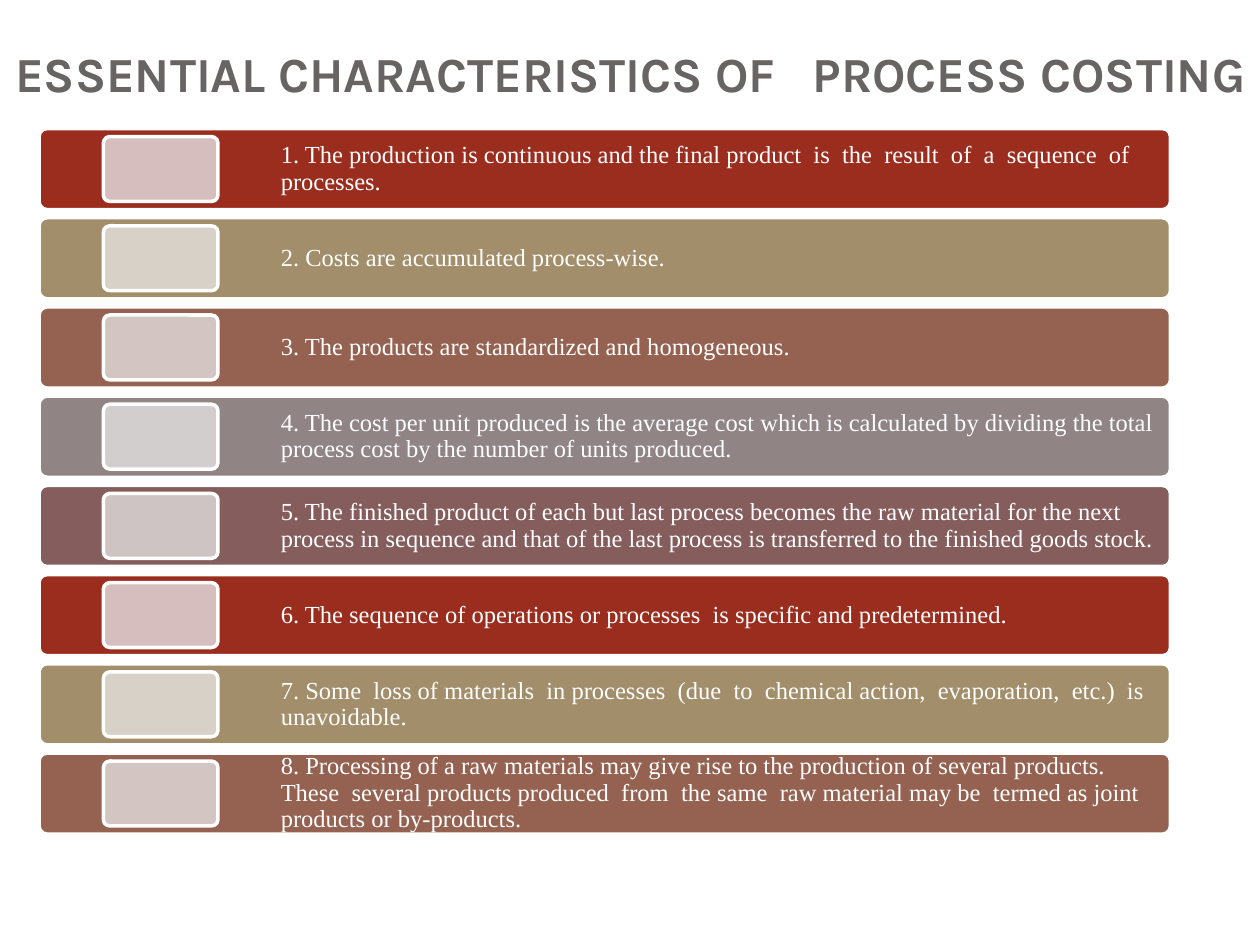
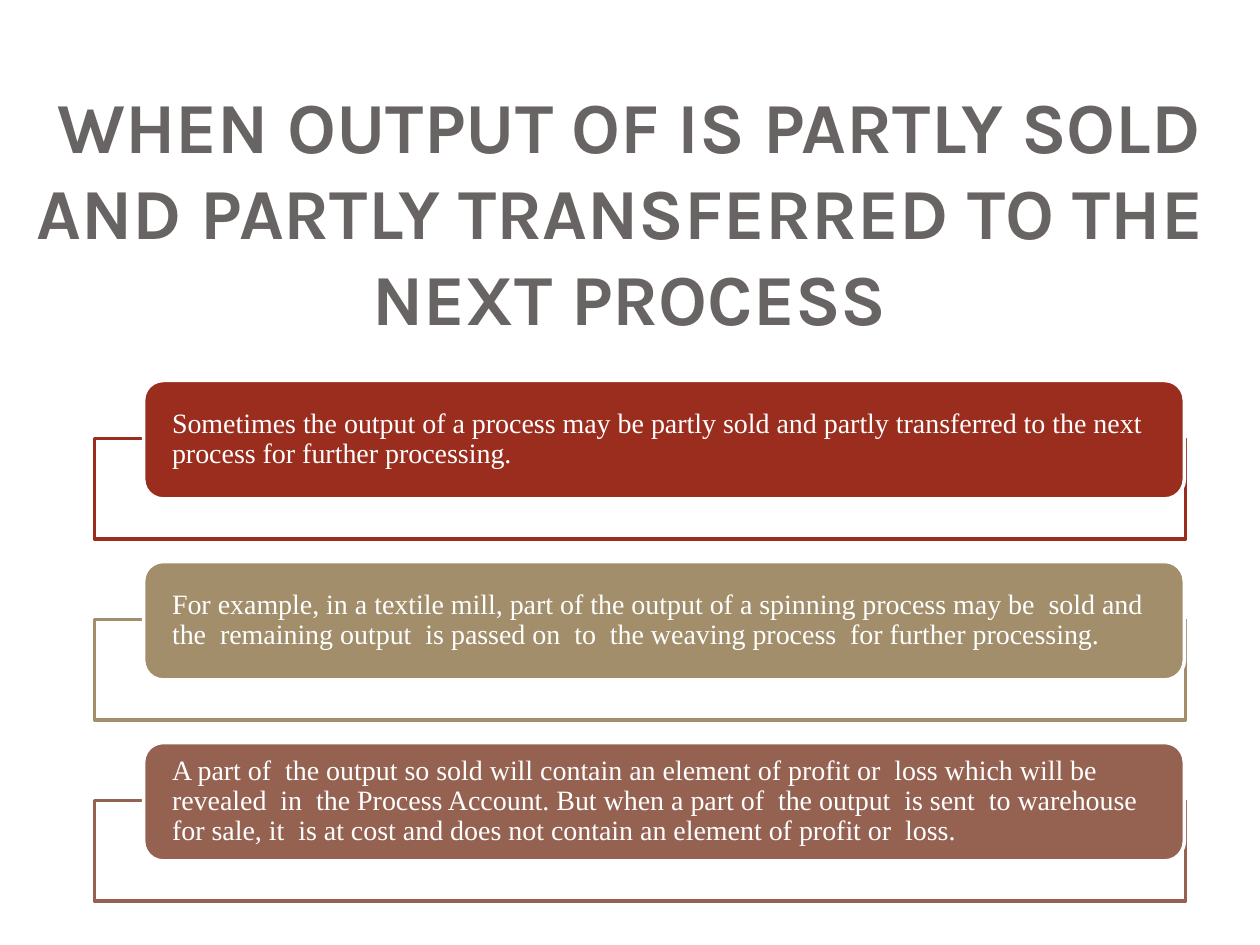
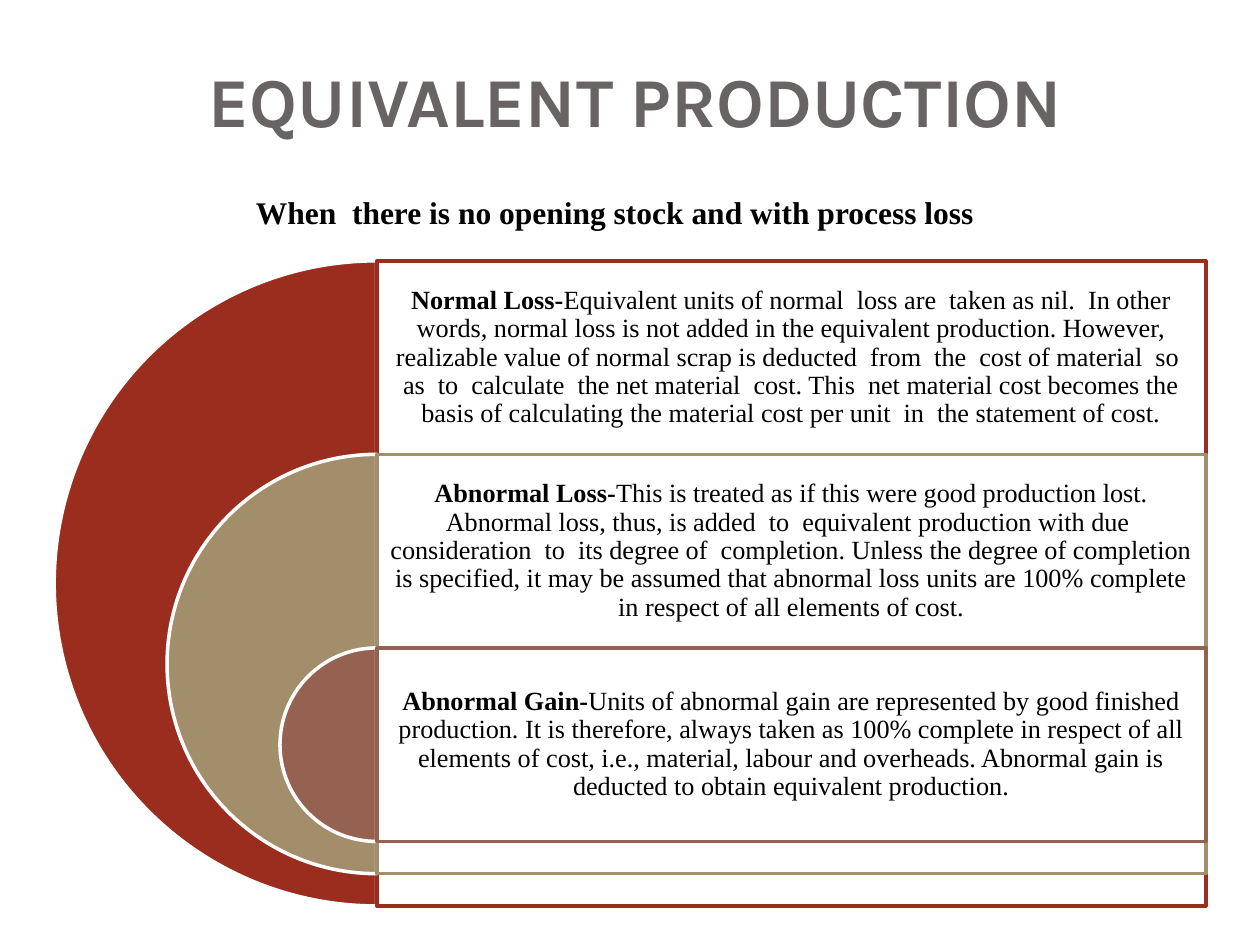
"""Build three slides on process costing."""
from lxml.etree import SubElement as Sub
from pptx import Presentation
from pptx.dml.color import RGBColor as Rgb
from pptx.enum.shapes import MSO_SHAPE as Form
from pptx.enum.text import MSO_ANCHOR as Anchor, PP_ALIGN as Align
from pptx.oxml.ns import qn
from pptx.util import Inches, Pt

WIDE, TALL = Inches(10), Inches(7.5)
CELL = WIDE // 100
HUES = {
    "title": "696464", "white": "FFFFFF", "black": "000000",
    "red": "9B2D1F", "sand": "A28E6A", "clay": "956251",
    "grey": "918485", "plum": "855D5D",
}
TINTS = {
    "red": "D5BEBD", "sand": "D7D1C7", "clay": "D3C5C2",
    "grey": "D2CECE", "plum": "CEC4C4",
}
CYCLE = list(TINTS)
HEAD = {"name": "Karla", "bold": True}
BODY = {"name": "Times New Roman", "bold": False}
BOLD = {**BODY, "bold": True}
SIDES = ("margin_left", "margin_top", "margin_right", "margin_bottom")

TRAITS = [
    "1. The production is continuous and the final product  is  the  result  of  a  sequence  of processes.",
    "2. Costs are accumulated process-wise.",
    "3. The products are standardized and homogeneous.",
    "4. The cost per unit produced is the average cost which is calculated by dividing the total process cost by the number of units produced.",
    "5. The finished product of each but last process becomes the raw material for the next process in sequence and that of the last process is transferred to the finished goods stock.",
    "6. The sequence of operations or processes  is specific and predetermined.",
    "7. Some  loss of materials  in processes  (due  to  chemical action,  evaporation,  etc.)  is unavoidable.",
    "8. Processing of a raw materials may give rise to the production of several products. These  several products produced  from  the same  raw material may be  termed as joint products or by-products.",
]
SALES = [
    "Sometimes the output of a process may be partly sold and partly transferred to the next process for further processing.",
    "For example, in a textile mill, part of the output of a spinning process may be  sold and  the  remaining output  is passed on  to  the weaving process  for further processing.",
    "A part of  the output so sold will contain an element of profit or  loss which will be  revealed  in  the Process Account. But when a part of  the output  is sent  to warehouse for sale, it  is at cost and does not contain an element of profit or  loss.",
]
LOSSES = [
    ("Normal Loss-", "Equivalent units of normal  loss are  taken as nil.  In other words, normal loss is not added in the equivalent production. However, realizable value of normal scrap is deducted  from  the  cost of material  so  as  to  calculate  the net material  cost. This  net material cost becomes the basis of calculating the material cost per unit  in  the statement of cost."),
    ("Abnormal Loss-", "This is treated as if this were good production lost. Abnormal loss, thus, is added  to  equivalent production with due  consideration  to  its degree of  completion. Unless the degree of completion is specified, it may be assumed that abnormal loss units are 100% complete in respect of all elements of cost."),
    ("Abnormal Gain-", "Units of abnormal gain are represented by good finished production. It is therefore, always taken as 100% complete in respect of all elements of cost, i.e., material, labour and overheads. Abnormal gain is deducted to obtain equivalent production."),
]


def place(box):
    """Turn a box in grid cells into slide lengths."""
    return [round(part * CELL) for part in box]


def write(shape, runs, size, hue, pad, align=Align.LEFT, anchor=Anchor.MIDDLE, gap=0.9):
    """Fill a shape with one paragraph of (text, font) runs."""
    frame = shape.text_frame
    looks = dict(zip(SIDES, place(pad)), word_wrap=True, vertical_anchor=anchor)
    for key, value in looks.items():
        setattr(frame, key, value)
    line = frame.paragraphs[0]
    line.alignment, line.line_spacing = align, gap
    for text, font in runs:
        run = line.add_run()
        run.text = text
        for key, value in {**font, "size": Pt(size)}.items():
            setattr(run.font, key, value)
        run.font.color.rgb = Rgb.from_string(HUES[hue])
    return line


def draw(slide, form, box, fill, edge=HUES["white"], alpha=None, bends=()):
    """Add a preset shape with a plain fill and a two point line."""
    shape = slide.shapes.add_shape(form, *place(box))
    shape.shadow.inherit = False
    shape.fill.solid()
    shape.fill.fore_color.rgb = Rgb.from_string(fill)
    shape.line.color.rgb = Rgb.from_string(edge)
    shape.line.width = Pt(2)
    for i, bend in enumerate(bends):
        shape.adjustments[i] = bend
    if alpha:
        tone = shape.fill._xPr.find(qn("a:solidFill"))[0]
        Sub(tone, qn("a:alpha"), val=str(alpha * 1000))
    return shape


def title(slide, text, box, size):
    """Write the slide title, resting on the foot of its box."""
    area = slide.shapes.add_textbox(*place(box))
    write(area, [(text, HEAD)], size, "title", (1, 0.5, 1, 1),
          Align.CENTER, Anchor.BOTTOM, 1.0)


def lead(slide, text, box):
    """Write the bold line above the rings."""
    area = slide.shapes.add_textbox(*place(box))
    line = write(area, [(text, BOLD)], 18, "black", (1, 0.5, 1, 0.5),
                 Align.CENTER, Anchor.TOP, 1.0)
    props = line._p.get_or_add_pPr()
    props.set("marL", "0")
    props.set("indent", str(-round(3.8 * CELL)))


def bars(slide, box, items):
    """Stack equal bars, each with a pale tile at its left."""
    left, top, wide, tall = box
    high = tall / (len(items) * 1.1 - 0.1)
    for i, text in enumerate(items):
        hue = CYCLE[i % len(CYCLE)]
        y = top + i * high * 1.1
        bar = draw(slide, Form.ROUNDED_RECTANGLE, (left, y, wide, high), HUES[hue], bends=[0.1])
        write(bar, [(text, BODY)], 14, "white", (19, 0.4, 0.4, 0.4))
        draw(slide, Form.ROUNDED_RECTANGLE, (left + 5.1, y + high * 0.1, 9.1, high * 0.8),
             TINTS[hue], bends=[0.1])


def cards(slide, box, items):
    """Set each text on a card that overlaps an outlined tray."""
    left, top, wide, tall = box
    pitch = tall / len(items)
    for i, (text, hue) in enumerate(zip(items, CYCLE)):
        y = top + i * pitch
        draw(slide, Form.RECTANGLE, (left, y + 4.6, wide, 8), HUES["white"], HUES[hue], 90)
        card = draw(slide, Form.ROUNDED_RECTANGLE, (left + 3.9, y, wide - 4, 9.4), HUES[hue])
        write(card, [(text, BODY)], 16, "white", (1.8, 0, 1.8, 0))


def rings(slide, box, items):
    """Nest half discs, each beside the panel that explains it."""
    left, top, wide, tall = box
    band = tall * 0.3
    mid = left + tall / 2
    for i, ((name, text), hue) in enumerate(zip(items, CYCLE)):
        y, high = top + i * band, tall * (1 - 0.35 * i)
        draw(slide, Form.PIE, (mid - high / 2, y, high, high), HUES[hue], bends=[54, 162])
        panel = draw(slide, Form.RECTANGLE, (mid, y, wide - tall / 2, high),
                     HUES["white"], HUES[hue], 90)
        write(panel, [(name, BOLD), (text, BODY)], 15, "black",
              (0.6, 0.6, 0.6, high - band + 0.6), Align.CENTER)


def main():
    """Build and save the deck."""
    deck = Presentation()
    deck.slide_width, deck.slide_height = WIDE, TALL
    traits, sales, losses = [deck.slides.add_slide(deck.slide_layouts[6]) for _ in range(3)]

    title(traits, "ESSENTIAL CHARACTERISTICS OF   PROCESS COSTING", (0, 0, 100, 9.1), 28)
    bars(traits, (3.1, 10.2, 89.8, 56), TRAITS)

    title(sales, "WHEN OUTPUT OF IS PARTLY SOLD AND PARTLY TRANSFERRED TO THE  NEXT PROCESS",
          (0, 15.5, 100, 12.5), 41)
    cards(sales, (7.5, 30.2, 86.6, 43.1), SALES)

    title(losses, "EQUIVALENT PRODUCTION", (4.7, 2.3, 91.4, 9.9), 40)
    lead(losses, "When  there is no opening stock and with process loss", (3.9, 14.8, 89.8, 4))
    rings(losses, (4.3, 20.7, 91.4, 51.2), LOSSES)

    deck.save("out.pptx")


if __name__ == "__main__":
    main()
